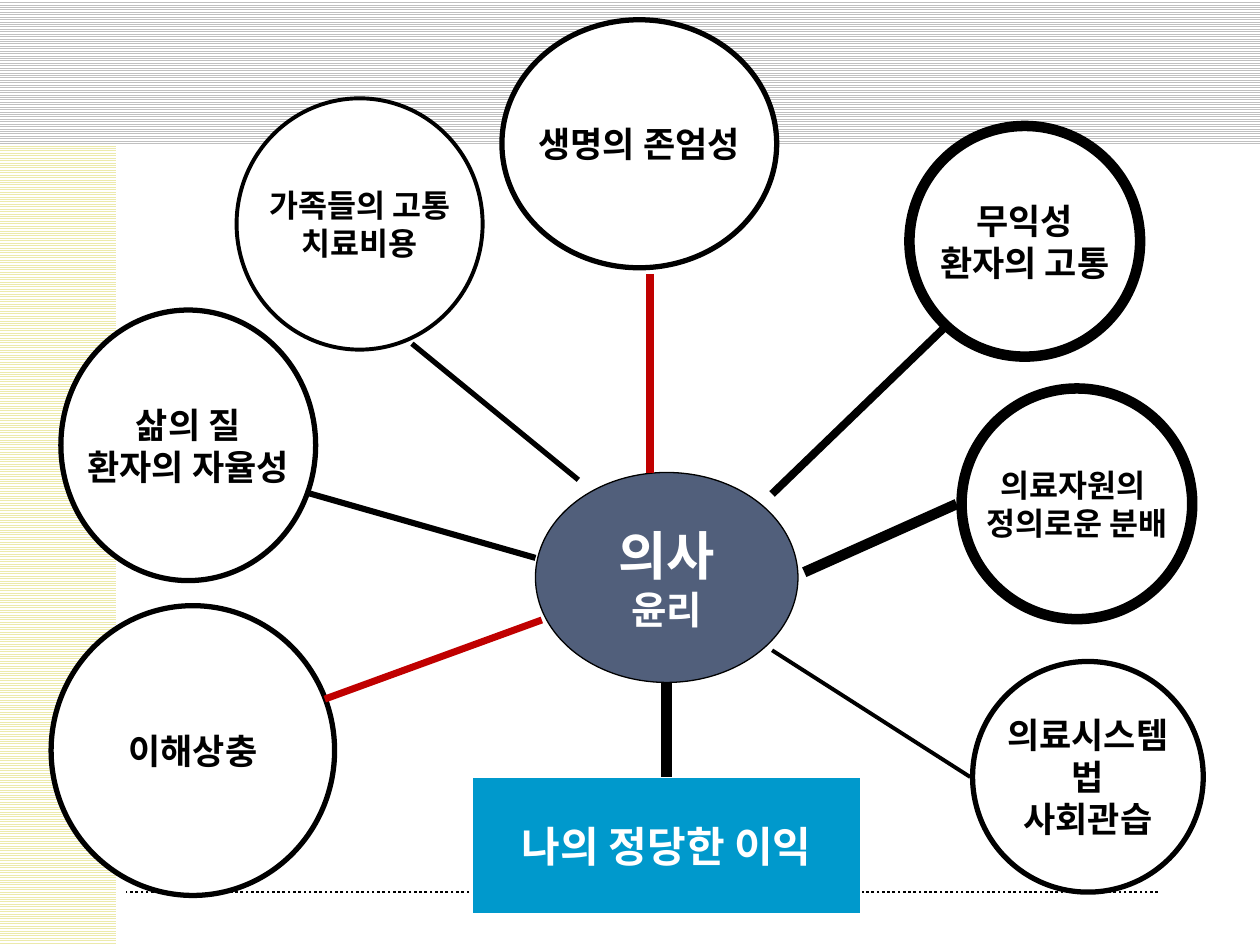
from dataclasses import dataclass
from typing import Optional

from lxml.etree import SubElement
from pptx import Presentation
from pptx.dml.color import RGBColor
from pptx.enum.dml import MSO_LINE, MSO_PATTERN
from pptx.enum.shapes import MSO_CONNECTOR, MSO_SHAPE
from pptx.enum.text import MSO_ANCHOR, PP_ALIGN
from pptx.oxml.ns import qn
from pptx.util import Pt

BLACK, WHITE, RED = "000000", "FFFFFF", "C00000"
SLATE, BLUE, GRAY, YELLOW = "515F7B", "0099CC", "C0C0C0", "ECEAAC"
FONT = "Cabin"


@dataclass
class Node:
    left: float
    top: float
    width: float
    height: float
    lines: list[str]
    sizes: list[float]
    border_width: float = 3
    fill: str = WHITE
    border: str = BLACK
    text: str = BLACK
    shape: MSO_SHAPE = MSO_SHAPE.OVAL
    wrap: bool = False


@dataclass
class Link:
    start: tuple[float, float]
    end: tuple[float, float]
    width: float
    color: str = BLACK
    dash: Optional[MSO_LINE] = None


@dataclass
class Band:
    width: float
    height: float
    color: str


SIDE_BAND = Band(66.2, 540, YELLOW)
TOP_BAND = Band(720, 82.8, GRAY)
FOOT_RULE = Link((661.7, 509.8), (72, 509.8), 1.5, dash=MSO_LINE.ROUND_DOT)

RING = 131.8
NODES = [
    Node(306, 270, 150, 120, ["의사", "윤리"], [30, 22], 0.75, SLATE, text=WHITE),
    Node(34.8, 177.2, 145.6, 154.6, ["삶의 질", "환자의 자율성"], [20, 20]),
    Node(135.2, 56.2, 140.6, 143.6, ["가족들의 고통", "치료비용"], [18, 18], 2.25),
    Node(286.8, 11.3, 157, 141.7, ["생명의 존엄성"], [20]),
    Node(519.7, 72, RING, RING, ["무익성", "환자의 고통"], [20, 20], 6),
    Node(555.8, 378, RING, RING, ["의료시스템", "법", "사회관습"], [20, 20, 20]),
    Node(549.5, 222, RING, RING, ["의료자원의 ", "정의로운 분배"], [18, 18], 6),
    Node(270, 444.3, 222, 78, ["나의 정당한 이익"], [24], 0.75, BLUE, WHITE, WHITE,
         MSO_SHAPE.RECTANGLE, True),
    Node(29.2, 346.1, 162, 165.6, ["이해상충"], [20]),
]

LINKS = [
    Link((235.4, 196.4), (330.5, 274.2), 3),
    Link((371.4, 156.5), (371.4, 270), 5, RED),
    Link((539.1, 187.8), (441.2, 282.3), 4.5),
    Link((554.4, 444), (441.2, 371.6), 2.25),
    Link((546.7, 288), (459.6, 327), 6),
    Link((381, 390), (381, 444.3), 6),
    Link((174.5, 281.3), (306, 318.8), 3.5),
    Link((185.6, 399.5), (309.6, 354.3), 4, RED),
]


def rgb(value: str) -> RGBColor:
    return RGBColor.from_string(value)


def apply(target, values: dict) -> None:
    for name, value in values.items():
        setattr(target, name, value)


def draw_band(page, band: Band) -> None:
    box = page.shapes.add_shape(MSO_SHAPE.RECTANGLE, 0, 0, Pt(band.width), Pt(band.height))
    box.shadow.inherit = False
    box.fill.patterned()
    box.fill.pattern = MSO_PATTERN.LIGHT_HORIZONTAL
    box.fill.fore_color.rgb = rgb(band.color)
    box.fill.back_color.rgb = rgb(WHITE)
    box.line.fill.background()


def draw_node(page, node: Node) -> None:
    place = [Pt(value) for value in (node.left, node.top, node.width, node.height)]
    box = page.shapes.add_shape(node.shape, *place)
    box.shadow.inherit = False
    box.fill.solid()
    box.fill.fore_color.rgb = rgb(node.fill)
    box.line.color.rgb = rgb(node.border)
    box.line.width = Pt(node.border_width)
    frame = box.text_frame
    apply(frame, {"word_wrap": node.wrap, "vertical_anchor": MSO_ANCHOR.MIDDLE})
    for index, (line, size) in enumerate(zip(node.lines, node.sizes)):
        para = frame.add_paragraph() if index else frame.paragraphs[0]
        para.alignment = PP_ALIGN.CENTER
        span = para.add_run()
        span.text = line
        apply(span.font, {"name": FONT, "size": Pt(size), "bold": True})
        span.font.color.rgb = rgb(node.text)


def draw_link(page, link: Link) -> None:
    ends = [Pt(value) for value in (*link.start, *link.end)]
    connector = page.shapes.add_connector(MSO_CONNECTOR.STRAIGHT, *ends)
    connector.line.color.rgb = rgb(link.color)
    apply(connector.line, {"width": Pt(link.width), "dash_style": link.dash})
    SubElement(connector._element.spPr, qn("a:effectLst"))


def main() -> None:
    deck = Presentation()
    apply(deck, {"slide_width": Pt(720), "slide_height": Pt(540)})
    page = deck.slides.add_slide(deck.slide_layouts[6])
    draw_band(page, SIDE_BAND)
    draw_link(page, FOOT_RULE)
    draw_band(page, TOP_BAND)
    for node in NODES:
        draw_node(page, node)
    for link in LINKS:
        draw_link(page, link)
    deck.save("out.pptx")


if __name__ == "__main__":
    main()
